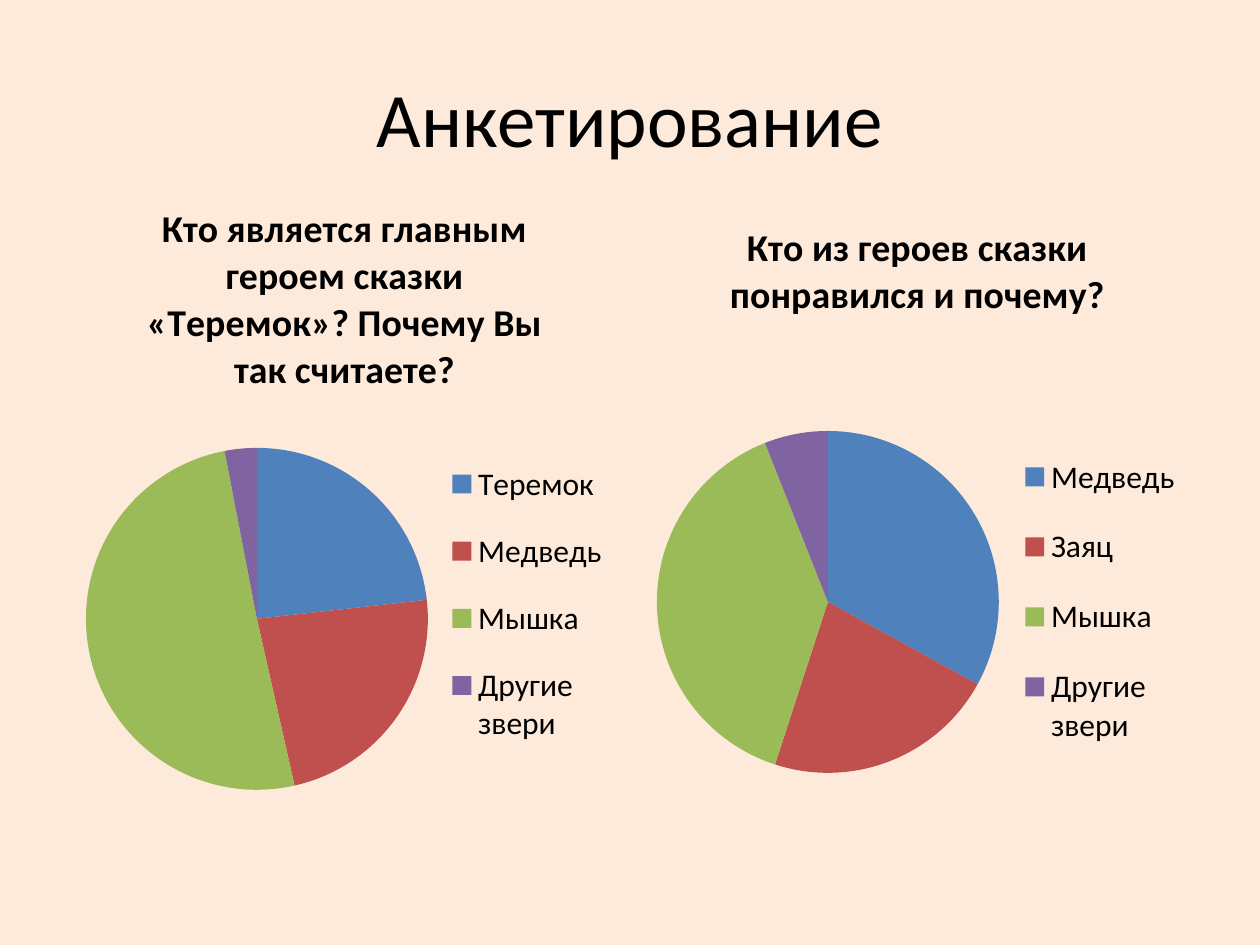
from lxml import etree
from pptx import Presentation
from pptx.chart.data import CategoryChartData
from pptx.dml.color import RGBColor
from pptx.enum.chart import XL_CHART_TYPE, XL_LEGEND_POSITION
from pptx.enum.text import MSO_ANCHOR, PP_ALIGN
from pptx.oxml.ns import qn
from pptx.util import Emu, Pt

PIE = XL_CHART_TYPE.PIE
RIGHT = XL_LEGEND_POSITION.RIGHT
MIDDLE = MSO_ANCHOR.MIDDLE
CENTER = PP_ALIGN.CENTER
PX = 914400 // 126
FONT = "Calibri"
INK = "000000"
SLICES = ["4F81BD", "C0504D", "9BBB59", "8064A2"]


def color(value):
    """Turn a hex string into a colour."""
    return RGBColor.from_string(value)


def px(*lengths):
    """Turn pixel lengths into EMU."""
    return [Emu(length * PX) for length in lengths]


def style(font, size, bold=False):
    """Apply the slide's typeface and ink."""
    font.name, font.size, font.bold = FONT, Pt(size), bold
    font.color.rgb = color(INK)


def set_layout(part, index, box, area, target=None):
    """Place a chart part at a pixel area relative to its chart box."""
    for old in part.findall(qn("c:layout")):
        part.remove(old)
    layout = etree.Element(qn("c:layout"))
    part.insert(index, layout)
    manual = etree.SubElement(layout, qn("c:manualLayout"))
    settings = [("layoutTarget", target)] if target else []
    settings += [("xMode", "edge"), ("yMode", "edge")]
    extents = box[2:] * 2
    settings += [(key, f"{length / extent:.4f}")
                 for key, length, extent in zip("xywh", area, extents)]
    for key, value in settings:
        etree.SubElement(manual, qn(f"c:{key}")).set("val", value)


def add_heading(slide, box, text):
    """Format and fill the title placeholder."""
    heading = slide.shapes.title
    heading.left, heading.top, heading.width, heading.height = px(*box)
    frame = heading.text_frame
    frame.text = text
    frame.vertical_anchor = MIDDLE
    frame.paragraphs[0].alignment = CENTER
    style(frame.paragraphs[0].font, 44)


def add_survey(slide, box, question, answers, question_at, pie_at, legend_at):
    """Add a pie chart of answers to one survey question."""
    data = CategoryChartData()
    data.categories = list(answers)
    data.add_series("Series 1", list(answers.values()))
    chart = slide.shapes.add_chart(PIE, *px(*box), data).chart
    style(chart.font, 18)

    chart.has_title = True
    title = chart.chart_title
    title.include_in_layout = False
    title.text_frame.text = question
    paragraph = title.text_frame.paragraphs[0]
    paragraph.alignment = CENTER
    style(paragraph.font, 21.6, True)
    set_layout(title._element, 1, box, question_at)

    chart.has_legend = True
    legend = chart.legend
    legend.position = RIGHT
    legend.include_in_layout = False
    set_layout(legend._element, 1, box, legend_at)

    plot = chart.plots[0]
    plot.vary_by_categories = True
    for index, value in enumerate(SLICES):
        fill = plot.series[0].points[index].format.fill
        fill.solid()
        fill.fore_color.rgb = color(value)
    set_layout(plot._element.getparent(), 0, box, pie_at, "inner")


def main():
    """Build the survey slide."""
    deck = Presentation()
    deck.slide_width, deck.slide_height = px(1260, 945)
    slide = deck.slides.add_slide(deck.slide_layouts[5])
    slide.background.fill.solid()
    slide.background.fill.fore_color.rgb = color("FDEADA")
    add_heading(slide, (63, 38, 1134, 157), "Анкетирование")
    add_survey(
        slide, (69, 186, 557, 644),
        "Кто является главным героем сказки «Теремок»? Почему Вы так считаете?",
        {"Теремок": 23, "Медведь": 23, "Мышка": 50, "Другие звери": 3},
        (71, 8), (17, 262, 342, 342), (372, 250, 172, 336))
    add_survey(
        slide, (640, 207, 557, 663),
        "Кто из героев сказки понравился и почему?",
        {"Медведь": 33, "Заяц": 22, "Мышка": 39, "Другие звери": 6},
        (83, 6), (17, 224, 342, 342), (374, 219, 172, 350))
    deck.save("out.pptx")


if __name__ == "__main__":
    main()
